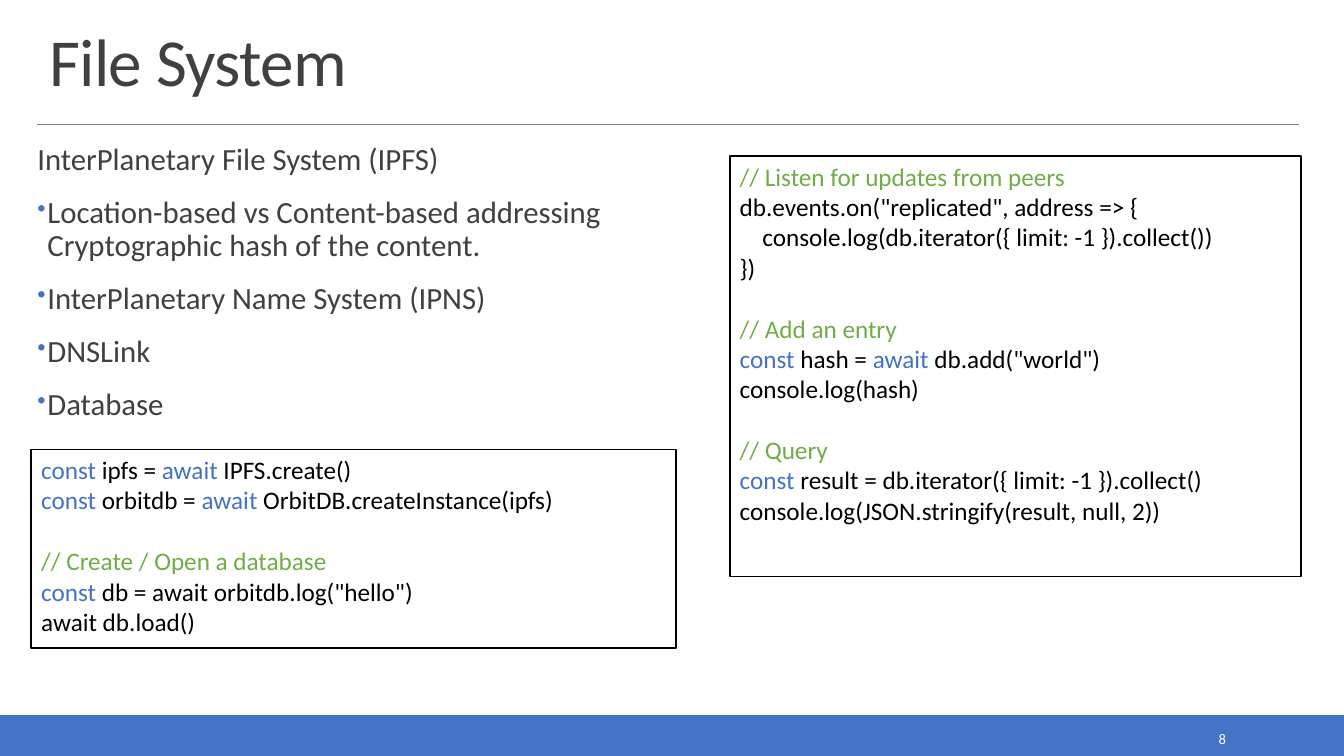
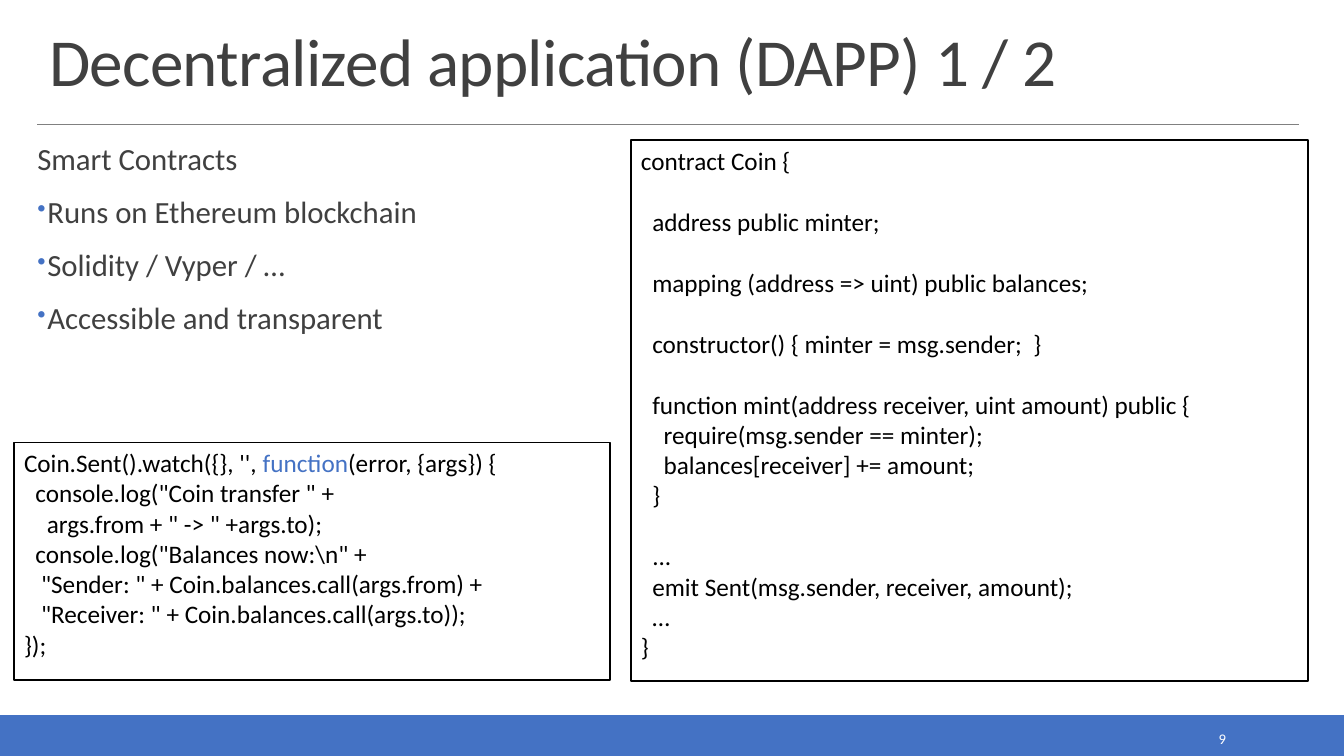
"""Build two slides on decentralized storage and smart contracts."""
from dataclasses import dataclass

from lxml import etree
from pptx import Presentation
from pptx import util as u
from pptx.dml.color import RGBColor
from pptx.enum import shapes, text
from pptx.oxml.ns import qn


@dataclass(frozen=True)
class Theme:
    """Colours, font and type sizes."""
    font: str = "Calibri"
    accent: str = "4472C4"
    comment: str = "70AD47"
    ink: str = "404040"
    code: str = "000000"
    rule: str = "808080"
    paper: str = "FFFFFF"
    title_size: float = 48
    body_size: float = 22
    code_size: float = 18
    number_size: float = 10.5
    outline: float = 1.25
    hairline: float = 0.5


@dataclass(frozen=True)
class Area:
    """A rectangle in percent of the slide's width and height."""
    left: float
    top: float
    width: float
    height: float

    def emu(self) -> tuple[int, int, int, int]:
        """Return left, top, width and height as lengths."""
        return (across(self.left), down(self.top),
                across(self.width), down(self.height))


@dataclass(frozen=True)
class CodePanel:
    """A framed listing; bars enclose its keywords."""
    area: Area
    source: str


@dataclass(frozen=True)
class Topic:
    """The content of one slide."""
    number: int
    title: str
    lead: str
    bullets: tuple[str, ...]
    body_height: float
    panels: tuple[CodePanel, ...]


THEME = Theme()
WIDTH, HEIGHT = u.Inches(13.333), u.Inches(7.5)
MARGIN, RIGHT, RULE_Y = 2.78, 96.67, 16.4
BODY_TOP, BODY_WIDTH = 18.53, 47.25
BAND = Area(0, 94.67, 100, 5.33)
TITLE = Area(2.93, 2.67, 93.9, 11.2)
NUMBER = Area(81.23, 95.87, 10.73, 3.73)

TOPICS = (
    Topic(
        8, "File System", "InterPlanetary File System (IPFS)",
        ("Location-based vs Content-based addressing\nCryptographic hash of the content.",
         "InterPlanetary Name System (IPNS)", "DNSLink", "Database"),
        40.93,
        (CodePanel(Area(2.33, 59.47, 48, 26.27), r"""
|const |ipfs = |await |IPFS.create()
|const |orbitdb = |await |OrbitDB.createInstance(ipfs)

// Create / Open a database
|const |db = await orbitdb.log("hello")
await db.load()
"""),
         CodePanel(Area(54.3, 20.67, 42.53, 55.6), r"""
// Listen for updates from peers
db.events.on("replicated", address => {
    console.log(db.iterator({ limit: -1 }).collect())
})

// Add an entry
|const| hash = |await |db.add("world")
console.log(hash)

// Query
|const| result = db.iterator({ limit: -1 }).collect()
console.log(JSON.stringify(result, null, 2))
"""))),
    Topic(
        9, "Decentralized application (DAPP) 1 / 2", "Smart Contracts",
        ("Runs on Ethereum blockchain", "Solidity / Vyper / …",
         "Accessible and transparent"),
        30.4,
        (CodePanel(Area(46.95, 18.53, 50.4, 71.6), r"""
contract Coin {

  address public minter;

  mapping (address => uint) public balances;

  constructor() { minter = msg.sender;  }

  function mint(address receiver, uint amount) public {
    require(msg.sender == minter);
    balances[receiver] += amount;
  }

  ...
  emit Sent(msg.sender, receiver, amount);
  …
}
"""),
         CodePanel(Area(1.05, 58.53, 44.33, 31.47), r"""
Coin.Sent().watch({}, '', |function|(error, {args}) {
  console.log("Coin transfer " +
    args.from + " -> " +args.to);
  console.log("Balances now:\n" +
   "Sender: " + Coin.balances.call(args.from) +
   "Receiver: " + Coin.balances.call(args.to));
});
"""))),
)


def across(percent: float) -> int:
    """Turn a share of the slide's width into a length."""
    return round(WIDTH * percent / 100)


def down(percent: float) -> int:
    """Turn a share of the slide's height into a length."""
    return round(HEIGHT * percent / 100)


def rgb(value: str) -> RGBColor:
    """Turn a hex value into a colour."""
    return RGBColor.from_string(value)


def style(span, size: float, color: str) -> None:
    """Format one run."""
    span.font.name = THEME.font
    span.font.size = u.Pt(size)
    span.font.color.rgb = rgb(color)


def write(para, words: str, size: float, color: str) -> None:
    """Set and format the text of a paragraph."""
    para.text = words
    for span in para.runs:
        style(span, size, color)


def add_text(page, area: Area, anchor=text.MSO_ANCHOR.TOP):
    """Add a wrapping text box and return its frame."""
    frame = page.shapes.add_textbox(*area.emu()).text_frame
    frame.word_wrap = True
    frame.vertical_anchor = anchor
    return frame


def add_rectangle(page, area: Area, line: str):
    """Add an outlined rectangle without fill or shadow."""
    box = page.shapes.add_shape(shapes.MSO_SHAPE.RECTANGLE, *area.emu())
    box.shadow.inherit = False
    box.fill.background()
    box.line.color.rgb = rgb(line)
    box.line.width = u.Pt(THEME.outline)
    return box


def add_frame(page, topic: Topic) -> None:
    """Draw the band, rule, title and page number."""
    band = add_rectangle(page, BAND, THEME.accent)
    band.fill.solid()
    band.fill.fore_color.rgb = rgb(THEME.accent)

    rule = page.shapes.add_connector(
        shapes.MSO_CONNECTOR.STRAIGHT,
        across(MARGIN), down(RULE_Y), across(RIGHT), down(RULE_Y))
    rule.line.color.rgb = rgb(THEME.rule)
    rule.line.width = u.Pt(THEME.hairline)
    etree.SubElement(rule._element.spPr, qn("a:effectLst"))

    heading = add_text(page, TITLE, text.MSO_ANCHOR.BOTTOM).paragraphs[0]
    write(heading, topic.title, THEME.title_size, THEME.ink)
    heading.line_spacing = 0.85
    for span in heading.runs:
        span.font._element.set("spc", "-50")

    number = add_text(page, NUMBER, text.MSO_ANCHOR.MIDDLE).paragraphs[0]
    write(number, str(topic.number), THEME.number_size, THEME.paper)
    number.alignment = text.PP_ALIGN.RIGHT


def add_bullet(para) -> None:
    """Give a paragraph a hanging accent bullet."""
    properties = para._p.get_or_add_pPr()
    indent = u.Inches(0.1)
    properties.set("marL", str(indent))
    properties.set("indent", str(-indent))
    color = etree.SubElement(properties, qn("a:buClr"))
    etree.SubElement(color, qn("a:srgbClr"), val=THEME.accent)
    etree.SubElement(properties, qn("a:buSzPct"), val="80000")
    etree.SubElement(properties, qn("a:buChar"), char="•")


def add_body(page, topic: Topic) -> None:
    """Write the lead line and its bullets."""
    frame = add_text(page, Area(MARGIN, BODY_TOP, BODY_WIDTH, topic.body_height))
    frame.margin_left = frame.margin_right = 0
    frame.margin_top = frame.margin_bottom = u.Inches(0.04)
    lead = frame.paragraphs[0]
    write(lead, topic.lead, THEME.body_size, THEME.ink)
    for bullet in topic.bullets:
        para = frame.add_paragraph()
        add_bullet(para)
        para.space_before = u.Pt(12)
        write(para, bullet, THEME.body_size, THEME.ink)
    for para in frame.paragraphs:
        para.line_spacing = 0.9
        para.space_after = u.Pt(2)


def add_code(page, panel: CodePanel) -> None:
    """Draw a framed listing with coloured keywords and comments."""
    frame = add_rectangle(page, panel.area, THEME.code).text_frame
    frame.word_wrap = True
    frame.vertical_anchor = text.MSO_ANCHOR.TOP
    for index, block in enumerate(panel.source.strip("\n").split("\n\n")):
        for row, line in enumerate(block.split("\n")):
            first = index == row == 0
            para = frame.paragraphs[0] if first else frame.add_paragraph()
            para.alignment = text.PP_ALIGN.LEFT
            if index and not row:
                para.space_before = u.Pt(THEME.code_size * 1.22)
            plain = THEME.comment if line.startswith("//") else THEME.code
            for part, words in enumerate(line.split("|")):
                if words:
                    span = para.add_run()
                    span.text = words
                    style(span, THEME.code_size, THEME.accent if part % 2 else plain)


def main() -> None:
    """Build and save the deck."""
    deck = Presentation()
    deck.slide_width, deck.slide_height = WIDTH, HEIGHT
    for topic in TOPICS:
        page = deck.slides.add_slide(deck.slide_layouts[6])
        add_frame(page, topic)
        add_body(page, topic)
        for panel in topic.panels:
            add_code(page, panel)
    deck.save("out.pptx")


if __name__ == "__main__":
    main()
